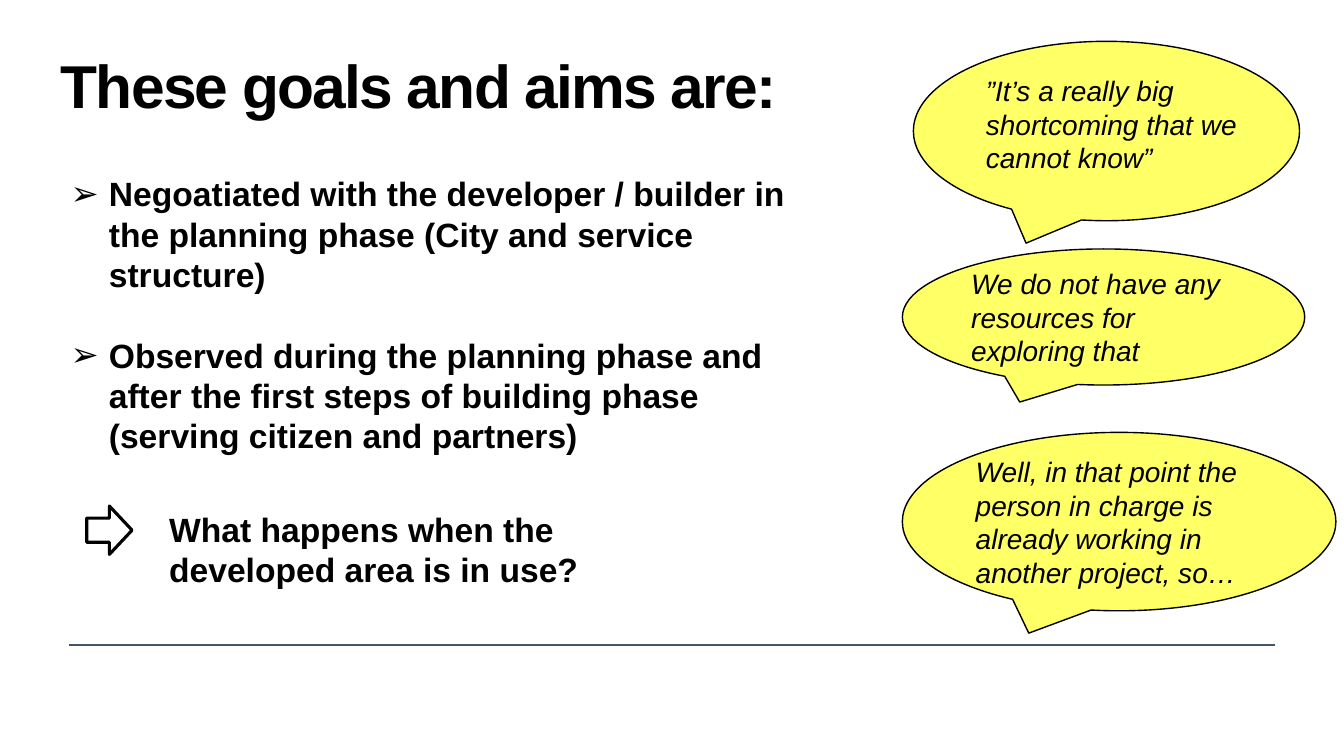
from lxml import etree
from pptx import Presentation
from pptx.dml.color import RGBColor
from pptx.enum import shapes, text
from pptx.oxml.ns import qn
from pptx.util import Inches, Pt

BLACK = RGBColor(0x00, 0x00, 0x00)
WHITE = RGBColor(0xFF, 0xFF, 0xFF)
YELLOW = RGBColor(0xFF, 0xFF, 0x66)
SLATE = RGBColor(0x44, 0x54, 0x6A)

KIND = shapes.MSO_SHAPE
TOP = text.MSO_ANCHOR.TOP
MID = text.MSO_ANCHOR.MIDDLE


class Deck:
    head = {"size": Pt(43.2), "bold": True, "italic": False}
    main = {"size": Pt(24), "bold": True, "italic": False}
    quote = {"size": Pt(20), "bold": False, "italic": True}

    def __init__(self):
        self.prs = Presentation()
        self.prs.slide_width = Inches(13.33)
        self.prs.slide_height = Inches(7.5)
        self.slide = self.prs.slides.add_slide(self.prs.slide_layouts[1])
        self.items = self.slide.shapes

    def place(self, shape, box):
        for name, value in zip(("left", "top", "width", "height"), box):
            setattr(shape, name, Inches(value))

    def fill_text(self, shape, lines, style, anchor=TOP, mark=None, gap=0):
        frame = shape.text_frame
        frame.text = "\n".join(lines)
        frame.word_wrap = True
        frame.auto_size = text.MSO_AUTO_SIZE.NONE
        frame.vertical_anchor = anchor
        for i, para in enumerate(frame.paragraphs):
            para.alignment = text.PP_ALIGN.LEFT
            para.space_before = Pt(gap if i else 0)
            if mark:
                props = para._p.get_or_add_pPr()
                props.set("marL", str(Inches(0.38)))
                props.set("indent", str(-Inches(0.38)))
                etree.SubElement(props, qn("a:buFont")).set("typeface", "Arial")
                etree.SubElement(props, qn("a:buChar")).set("char", mark)
            for run in para.runs:
                for name, value in {"name": "Arial", **style}.items():
                    setattr(run.font, name, value)
                run.font.color.rgb = BLACK
        return frame

    def title(self, box, line):
        shape = self.items.title
        self.place(shape, box)
        frame = self.fill_text(shape, [line], self.head)
        for side in ("left", "top", "right", "bottom"):
            setattr(frame, "margin_" + side, 0)
        para = frame.paragraphs[0]
        para.line_spacing = 0.85
        para.runs[0].font._element.set("spc", "-120")

    def body(self, box, lines):
        shape = self.slide.placeholders[1]
        self.place(shape, box)
        self.fill_text(shape, lines, self.main, mark="➢", gap=28.8)

    def label(self, box, line, style):
        shape = self.items.add_textbox(*map(Inches, box))
        self.fill_text(shape, [line], style)

    def shape(self, kind, box, fill, width, line=None):
        shape = self.items.add_shape(kind, *map(Inches, box))
        shape.shadow.inherit = False
        shape.fill.solid()
        shape.fill.fore_color.rgb = fill
        shape.line.color.rgb = BLACK
        shape.line.width = Pt(width)
        if line:
            self.fill_text(shape, [line], self.quote, MID)

    def rule(self, left, right, top):
        line = self.items.add_connector(
            shapes.MSO_CONNECTOR.STRAIGHT,
            Inches(left), Inches(top), Inches(right), Inches(top))
        line.line.color.rgb = SLATE
        line.line.width = Pt(1)
        etree.SubElement(line._element.spPr, qn("a:effectLst"))


def main():
    deck = Deck()

    # Footer rule, title and list
    deck.rule(0.68, 12.65, 6.4)
    deck.title((0.6, 0.59, 7.87, 0.71), "These goals and aims are:")
    deck.body((0.6, 1.67, 7.38, 3.3), [
        "Negoatiated with the developer / builder in the planning phase "
        "(City and service structure)",
        "Observed during the planning phase and after the first steps of "
        "building phase (serving citizen and partners)",
    ])

    # Speech bubbles
    for box, line in (
        ((9.06, 0.41, 3.83, 1.78), None),
        ((8.95, 2.47, 3.99, 1.35),
         "We do not have any resources for exploring that"),
        ((8.95, 4.29, 4.3, 1.77),
         "Well, in that point the person in charge is already working in "
         "another project, so…"),
    ):
        deck.shape(KIND.OVAL_CALLOUT, box, YELLOW, 1, line)
    deck.label((9.68, 0.68, 3, 1.11),
               "”It’s a really big shortcoming that we cannot know”", deck.quote)

    # Closing question
    deck.shape(KIND.RIGHT_ARROW, (0.86, 5.02, 0.45, 0.48), WHITE, 2.25)
    deck.label((1.58, 5, 4.6, 0.91),
               "What happens when the developed area is in use?", deck.main)

    deck.prs.save("out.pptx")


if __name__ == "__main__":
    main()
